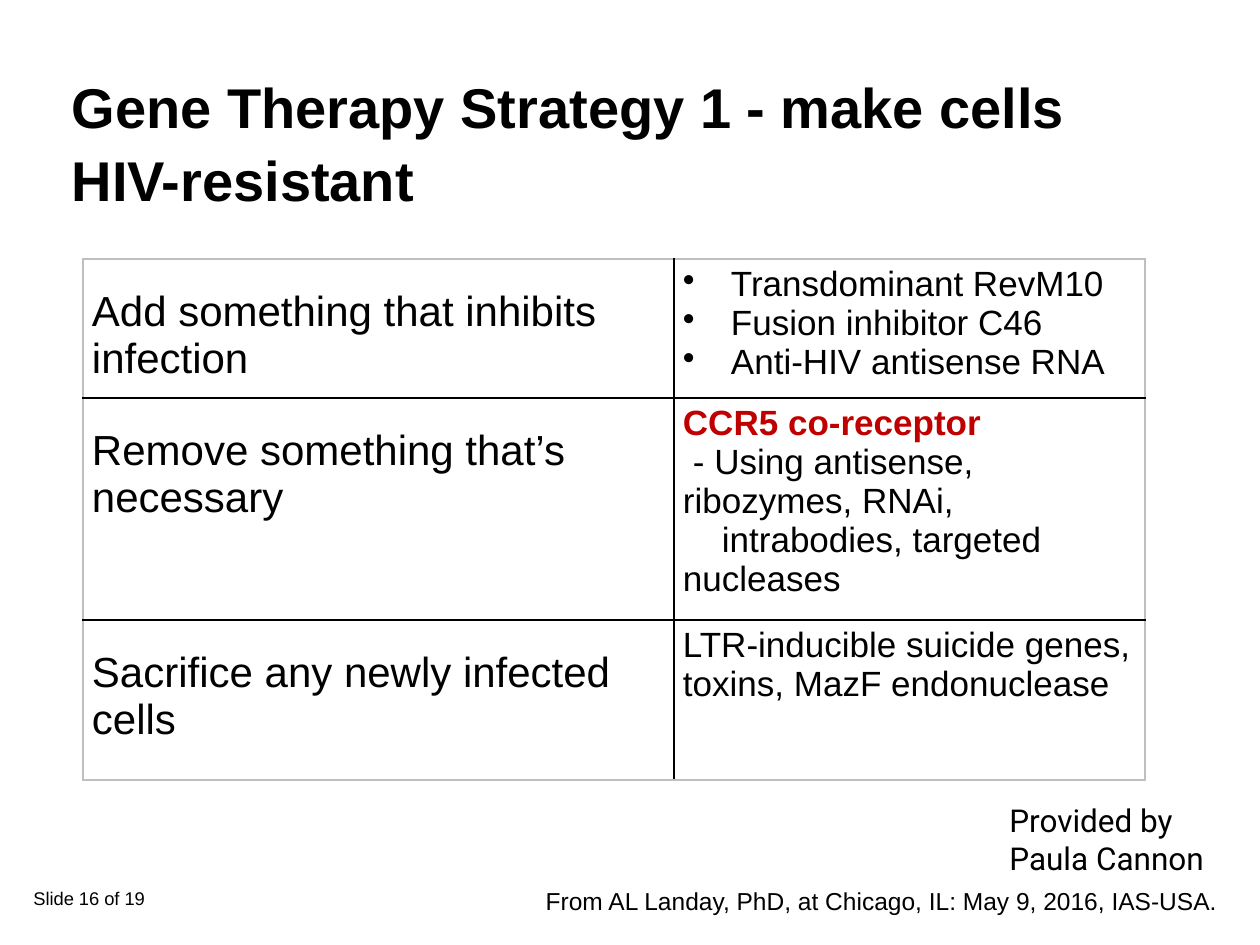
"""Build the gene therapy strategy slide with its table of approaches."""
from dataclasses import dataclass

from lxml.etree import SubElement
from pptx import Presentation
from pptx.dml.color import RGBColor as Color
from pptx.enum.text import MSO_ANCHOR as Anchor, PP_ALIGN as Align
from pptx.oxml import parse_xml
from pptx.oxml.ns import nsdecls, qn
from pptx.util import Emu, Pt

EMU_PER_PX = 914400 / 126


def px(length):
    return Emu(round(length * EMU_PER_PX))


@dataclass(frozen=True)
class Theme:
    font: str = "Arial"
    credit_font: str = "Roboto"
    ink: str = "000000"
    accent: str = "C00000"
    frame: str = "BFBFBF"
    title: float = 32
    strategy: float = 24
    example: float = 20
    credit: float = 18
    source: float = 14
    counter: float = 10.5


@dataclass(frozen=True)
class Line:
    text: str
    bold: bool = False
    color: str = Theme.ink
    margin: int = 0
    indent: int = 0
    bullet: str = ""


class SlideBuilder:
    def __init__(self, presentation, theme):
        self.theme = theme
        self.slide = presentation.slides.add_slide(presentation.slide_layouts[5])

    def add_run(self, paragraph, line, size, font=None):
        run = paragraph.add_run()
        run.text = line.text
        run.font.name = font or self.theme.font
        run.font.size = Pt(size)
        run.font.bold = line.bold
        run.font.color.rgb = Color.from_string(line.color)

    def title(self, text, box):
        shape = self.slide.shapes.title
        shape.left, shape.top, shape.width, shape.height = map(px, box)
        frame = shape.text_frame
        frame.word_wrap = True
        frame.vertical_anchor = Anchor.TOP
        paragraph = frame.paragraphs[0]
        paragraph.alignment = Align.LEFT
        paragraph.line_spacing = 1.09
        self.add_run(paragraph, Line(text, bold=True), self.theme.title)

    def text(self, text, box, size, font=None, align=Align.LEFT):
        frame = self.slide.shapes.add_textbox(*map(px, box)).text_frame
        frame.word_wrap = True
        paragraph = frame.paragraphs[0]
        paragraph.alignment = align
        self.add_run(paragraph, Line(text), size, font)

    def table(self, rows, left, top, widths, heights):
        shape = self.slide.shapes.add_table(
            len(rows), len(widths), px(left), px(top), px(sum(widths)), px(sum(heights)))
        table = shape.table
        table.first_row = table.horz_banding = False
        for column, width in zip(table.columns, widths):
            column.width = px(width)
        for row, height in zip(table.rows, heights):
            row.height = px(height)
        last_row, last_column = len(rows) - 1, len(widths) - 1
        for r, (strategy, examples) in enumerate(rows):
            self.cell(table.cell(r, 0), [Line(strategy)], self.theme.strategy, 30)
            self.cell(table.cell(r, 1), examples, self.theme.example, 6)
            for c in range(len(widths)):
                self.borders(table.cell(r, c), {
                    "lnL": c == 0, "lnR": c == last_column,
                    "lnT": r == 0, "lnB": r == last_row})

    def cell(self, cell, lines, size, margin_top):
        cell.fill.background()
        cell.vertical_anchor = Anchor.TOP
        cell.margin_left = cell.margin_right = px(9)
        cell.margin_top, cell.margin_bottom = px(margin_top), px(6)
        frame = cell.text_frame
        for index, line in enumerate(lines):
            paragraph = frame.add_paragraph() if index else frame.paragraphs[0]
            properties = paragraph._p.get_or_add_pPr()
            properties.set("marL", str(px(line.margin)))
            properties.set("indent", str(px(line.indent)))
            if line.bullet:
                SubElement(properties, qn("a:buChar")).set("char", line.bullet)
            self.add_run(paragraph, line, size)

    def borders(self, cell, outer_sides):
        properties = cell._tc.get_or_add_tcPr()
        for index, (side, is_outer) in enumerate(outer_sides.items()):
            color = self.theme.frame if is_outer else self.theme.ink
            properties.insert(index, parse_xml(
                f'<a:{side} {nsdecls("a")} w="{Pt(1)}"><a:solidFill>'
                f'<a:srgbClr val="{color}"/></a:solidFill></a:{side}>'))


def bullets(*texts):
    return [Line(text, margin=48, indent=-48, bullet="•") for text in texts]


def main():
    presentation = Presentation()
    presentation.slide_width, presentation.slide_height = px(1260), px(945)
    theme = Theme()
    builder = SlideBuilder(presentation, theme)
    builder.text("Slide 16 of 19", (21, 881, 210, 35), theme.counter)
    builder.text("From AL Landay, PhD, at Chicago, IL: May 9, 2016, IAS-USA.",
                 (325, 880, 905, 43), theme.source, align=Align.RIGHT)
    rows = [
        ("Add something that inhibits infection",
         bullets("Transdominant RevM10", "Fusion inhibitor C46", "Anti-HIV antisense RNA")),
        ("Remove something that’s necessary",
         [Line("CCR5 co-receptor", bold=True, color=theme.accent),
          Line("- Using antisense, ribozymes, RNAi,", indent=10),
          Line("intrabodies, targeted nucleases", indent=39)]),
        ("Sacrifice any newly infected cells",
         [Line("LTR-inducible suicide genes, toxins, MazF endonuclease")]),
    ]
    builder.table(rows, 83, 259, widths=(591, 471), heights=(139, 222, 160))
    builder.title("Gene Therapy Strategy 1 - make cells HIV-resistant", (59, 60, 1086, 149))
    builder.text("Provided by Paula Cannon", (997, 795, 263, 89),
                 theme.credit, theme.credit_font)
    presentation.save("out.pptx")


if __name__ == "__main__":
    main()
